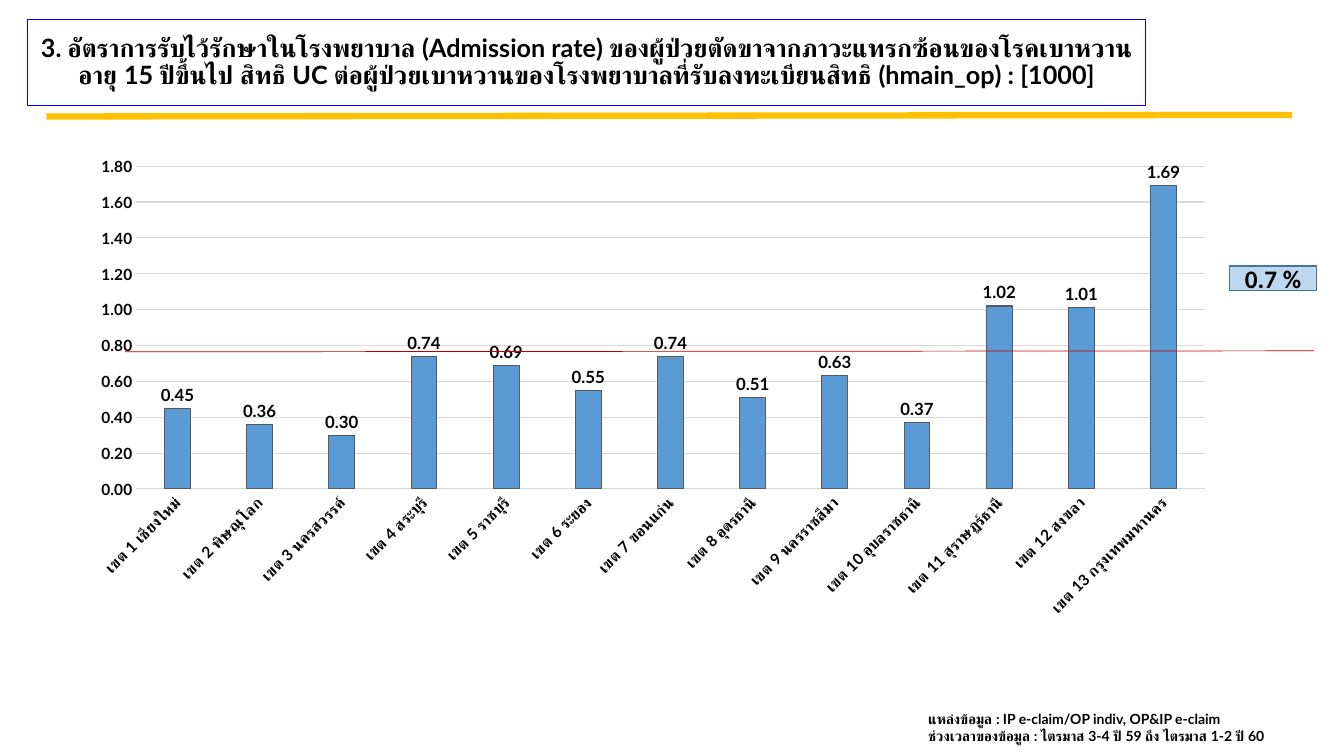
from dataclasses import dataclass
from typing import Any

from pptx import Presentation
from pptx import util as u
from pptx.chart import data as cd
from pptx.dml.color import RGBColor
from pptx.enum import chart as ch, shapes, text
from pptx.oxml import ns
from lxml import etree

BLACK = RGBColor(0, 0, 0)
WHITE = RGBColor(255, 255, 255)
TITLE_BLUE = RGBColor(0, 0, 255)
GOLD = RGBColor(0xFF, 0xC0, 0x00)
TARGET_RED = RGBColor(0xC0, 0x00, 0x00)
GRID_GRAY = RGBColor(0xD9, 0xD9, 0xD9)
BAR_BLUE = RGBColor(0x5B, 0x9B, 0xD5)
BAR_EDGE = RGBColor(0x59, 0x59, 0x59)
TARGET_FILL = RGBColor(0xBD, 0xD7, 0xEE)
TARGET_EDGE = RGBColor(0x43, 0x73, 0x9E)

TITLE = (
    "3. อัตราการรับไว้รักษาในโรงพยาบาล (Admission rate) "
    "ของผู้ป่วยตัดขาจากภาวะแทรกซ้อนของโรคเบาหวาน "
    "อายุ 15 ปีขึ้นไป สิทธิ UC ต่อผู้ป่วยเบาหวานของโรงพยาบาลที่รับลงทะเบียนสิทธิ "
    "(hmain_op) : [1000]"
)
SOURCE_LINES = (
    "แหล่งข้อมูล : IP e-claim/OP indiv, OP&IP e-claim",
    "ช่วงเวลาของข้อมูล : ไตรมาส 3-4 ปี 59 ถึง ไตรมาส 1-2 ปี 60",
)
RATES = {
    "เชียงใหม่": 0.45, "พิษณุโลก": 0.36, "นครสวรรค์": 0.30, "สระบุรี": 0.74,
    "ราชบุรี": 0.69, "ระยอง": 0.55, "ขอนแก่น": 0.74, "อุดรธานี": 0.51,
    "นครราชสีมา": 0.63, "อุบลราชธานี": 0.37, "สุราษฎร์ธานี": 1.02,
    "สงขลา": 1.01, "กรุงเทพมหานคร": 1.69,
}


@dataclass(frozen=True)
class Rule:
    start: tuple[float, float]
    end: tuple[float, float]
    color: RGBColor
    width: float


RULES = (
    Rule((33.1, 83.2), (923, 82.1), GOLD, 4.5),
    Rule((89.3, 251.3), (938.9, 250.6), TARGET_RED, 0.5),
)


def apply(target: Any, formats: dict[str, Any]) -> None:
    for name, value in formats.items():
        setattr(target, name, value)


def place(shape: Any, left: float, top: float, width: float, height: float) -> None:
    apply(shape, {"left": u.Pt(left), "top": u.Pt(top),
                  "width": u.Pt(width), "height": u.Pt(height)})


def style_font(font: Any, size: float, name: str = "Lato") -> None:
    apply(font, {"size": u.Pt(size), "name": name, "bold": True})
    font.color.rgb = BLACK


def style_line(line: Any, color: RGBColor, width: float) -> None:
    line.color.rgb = color
    line.width = u.Pt(width)


def style_box(box: Any, fill: RGBColor, edge: RGBColor, width: float) -> None:
    box.fill.solid()
    box.fill.fore_color.rgb = fill
    style_line(box.line, edge, width)


def write(frame: Any, lines: tuple[str, ...], size: float, name: str = "Lato",
          **formats: Any) -> None:
    for index, line in enumerate(lines):
        paragraph = frame.paragraphs[0] if index == 0 else frame.add_paragraph()
        run = paragraph.add_run()
        run.text = line
        style_font(run.font, size, name)
        apply(paragraph, formats)


def add_rule(slide: Any, rule: Rule) -> None:
    points = (u.Pt(value) for value in rule.start + rule.end)
    connector = slide.shapes.add_connector(shapes.MSO_CONNECTOR.STRAIGHT, *points)
    style_line(connector.line, rule.color, rule.width)
    etree.SubElement(connector._element.spPr, ns.qn("a:effectLst"))


def add_title(slide: Any) -> None:
    title = slide.shapes.title
    place(title, 19.4, 13.7, 799.2, 61.9)
    style_box(title, WHITE, TITLE_BLUE, 0.75)
    apply(title.text_frame, {"word_wrap": True, "auto_size": text.MSO_AUTO_SIZE.NONE,
                             "vertical_anchor": text.MSO_ANCHOR.MIDDLE})
    write(title.text_frame, (TITLE,), 18,
          alignment=text.PP_ALIGN.CENTER, line_spacing=0.9)


def add_rate_chart(slide: Any) -> None:
    rates = cd.CategoryChartData(number_format="0.00")
    rates.categories = [f"เขต {zone} {city}" for zone, city in enumerate(RATES, 1)]
    rates.add_series("Series 1", RATES.values())
    area = (u.Pt(value) for value in (55.4, 105.1, 821.5, 342))
    chart = slide.shapes.add_chart(
        ch.XL_CHART_TYPE.COLUMN_CLUSTERED, *area, rates).chart
    apply(chart, {"has_legend": False, "has_title": False})
    style_font(chart.font, 12)

    plot = chart.plots[0]
    apply(plot, {"gap_width": 219, "overlap": -27, "vary_by_categories": False,
                 "has_data_labels": True})
    apply(plot.data_labels, {"show_value": True, "number_format": "0.00",
                             "number_format_is_linked": False,
                             "position": ch.XL_LABEL_POSITION.OUTSIDE_END})
    style_font(plot.data_labels.font, 12)
    style_box(plot.series[0].format, BAR_BLUE, BAR_EDGE, 0.75)

    zones, scale = chart.category_axis, chart.value_axis
    for axis in (zones, scale):
        apply(axis, {"major_tick_mark": ch.XL_TICK_MARK.NONE,
                     "minor_tick_mark": ch.XL_TICK_MARK.NONE})
        style_font(axis.tick_labels.font, 11)
    zones._element.txPr.bodyPr.set("rot", "-2700000")
    style_line(zones.format.line, GRID_GRAY, 0.75)
    apply(scale, {"minimum_scale": 0, "maximum_scale": 1.8, "major_unit": 0.2,
                  "has_major_gridlines": True})
    apply(scale.tick_labels, {"number_format": "0.00", "number_format_is_linked": False})
    scale.format.line.fill.background()
    style_line(scale.major_gridlines.format.line, GRID_GRAY, 0.75)


def add_target(slide: Any) -> None:
    area = (u.Pt(value) for value in (878.4, 190.1, 61.9, 17.3))
    target = slide.shapes.add_shape(shapes.MSO_SHAPE.RECTANGLE, *area)
    target.shadow.inherit = False
    style_box(target, TARGET_FILL, TARGET_EDGE, 1)
    target.text_frame.vertical_anchor = text.MSO_ANCHOR.MIDDLE
    write(target.text_frame, ("0.7 %",), 18, "Calibri", alignment=text.PP_ALIGN.CENTER)


def add_source(slide: Any) -> None:
    area = (u.Pt(value) for value in (655.9, 504, 295.2, 31.7))
    source = slide.shapes.add_textbox(*area)
    apply(source.text_frame, {"word_wrap": True,
                              "auto_size": text.MSO_AUTO_SIZE.SHAPE_TO_FIT_TEXT})
    write(source.text_frame, SOURCE_LINES, 10)


def main() -> None:
    deck = Presentation()
    apply(deck, {"slide_width": u.Pt(960), "slide_height": u.Pt(540)})
    slide = deck.slides.add_slide(deck.slide_layouts.get_by_name("Title Only"))
    header_rule, target_rule = RULES
    add_rule(slide, header_rule)
    add_title(slide)
    add_rate_chart(slide)
    add_rule(slide, target_rule)
    add_target(slide)
    add_source(slide)
    deck.save("out.pptx")


if __name__ == "__main__":
    main()
